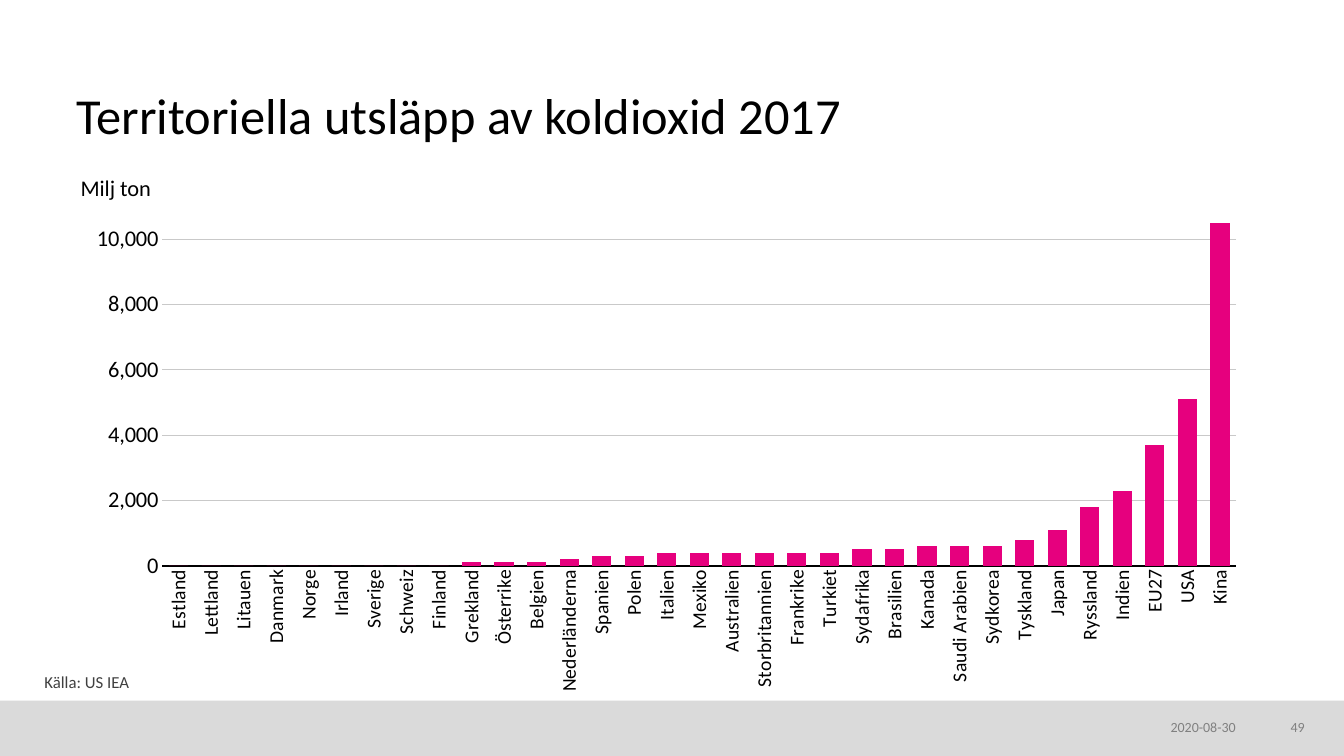
from lxml.etree import SubElement
from pptx import Presentation
from pptx.chart.data import CategoryChartData
from pptx.dml.color import RGBColor
from pptx.enum.chart import XL_CHART_TYPE, XL_TICK_MARK
from pptx.enum.shapes import MSO_SHAPE
from pptx.enum.text import MSO_ANCHOR, MSO_AUTO_SIZE, PP_ALIGN
from pptx.oxml import parse_xml
from pptx.oxml.ns import nsdecls, qn
from pptx.util import Inches, Pt

# Content
TITLE = "Territoriella utsläpp av koldioxid 2017"
UNIT = "Milj ton"
SOURCE = "Källa: US IEA"
DATE, PAGE = "2020-08-30", "49"
EMISSIONS = {
    "Estland": 0, "Lettland": 0, "Litauen": 0, "Danmark": 0, "Norge": 0,
    "Irland": 0, "Sverige": 0, "Schweiz": 0, "Finland": 0, "Grekland": 100,
    "Österrike": 100, "Belgien": 100, "Nederländerna": 200, "Spanien": 300,
    "Polen": 300, "Italien": 400, "Mexiko": 400, "Australien": 400,
    "Storbritannien": 400, "Frankrike": 400, "Turkiet": 400, "Sydafrika": 500,
    "Brasilien": 500, "Kanada": 600, "Saudi Arabien": 600, "Sydkorea": 600,
    "Tyskland": 800, "Japan": 1100, "Ryssland": 1800, "Indien": 2300,
    "EU27": 3700, "USA": 5100, "Kina": 10500,
}
PLOT = {"x": 0.115, "y": 0.062, "w": 0.881, "h": 0.598}

FONT = "Calibri"
BLACK = RGBColor(0x00, 0x00, 0x00)
DARK = RGBColor(0x40, 0x40, 0x40)
GREY = RGBColor(0x80, 0x80, 0x80)
BAND = RGBColor(0xDA, 0xDA, 0xDA)
GRID = RGBColor(0xC9, 0xC9, 0xC9)
PINK = RGBColor(0xE6, 0x00, 0x7E)


def style(font, size, color):
    font.name, font.size = FONT, Pt(size)
    font.color.rgb = color


def write(box, place, text, size, color, anchor=MSO_ANCHOR.TOP, inset=0,
          align=PP_ALIGN.LEFT, spacing=1.0, wrap=True):
    box.left, box.top, box.width, box.height = map(Inches, place)
    frame = box.text_frame
    frame.auto_size = MSO_AUTO_SIZE.NONE
    frame.word_wrap, frame.vertical_anchor = wrap, anchor
    frame.margin_left = frame.margin_right = Inches(inset)
    frame.margin_top = frame.margin_bottom = Inches(inset / 2)
    paragraph = frame.paragraphs[0]
    paragraph.alignment, paragraph.line_spacing = align, spacing
    paragraph.space_before = Pt(0)
    run = paragraph.add_run()
    run.text = text
    style(run.font, size, color)
    return paragraph


def label(place, text, size, color, **layout):
    return write(slide.shapes.add_textbox(0, 0, 0, 0), place, text, size, color, **layout)


prs = Presentation()
prs.slide_width, prs.slide_height = Inches(13.33), Inches(7.5)
slide = prs.slides.add_slide(prs.slide_layouts[1])

# Footer band
band = slide.shapes.add_shape(MSO_SHAPE.RECTANGLE, 0, Inches(6.95), prs.slide_width, Inches(0.55))
band.shadow.inherit = False
band.fill.solid()
band.fill.fore_color.rgb = BAND
band.line.fill.background()

# Title, source and small labels
write(slide.shapes.title, (0.76, 0.37, 11.87, 1.07), TITLE, 36, BLACK,
      anchor=MSO_ANCHOR.BOTTOM, spacing=0.85)
source = write(slide.placeholders[1], (0.44, 6.66, 4.86, 0.23), SOURCE, 12, DARK,
               anchor=MSO_ANCHOR.MIDDLE, spacing=0.9)
source_props = source._p.get_or_add_pPr()
source_props.set("marL", "0")
source_props.set("indent", "0")
SubElement(source_props, qn("a:buNone"))
label((11.61, 7.13, 0.85, 0.2), DATE, 10, GREY)
label((12.55, 7.13, 0.39, 0.2), PAGE, 10, GREY, align=PP_ALIGN.RIGHT)
label((0.7, 1.68, 0.91, 0.37), UNIT, 16, BLACK, inset=0.1, wrap=False)

# Emissions chart
data = CategoryChartData()
data.categories = list(EMISSIONS)
data.add_series("Series 1", list(EMISSIONS.values()))
chart = slide.shapes.add_chart(
    XL_CHART_TYPE.COLUMN_STACKED, Inches(0.22), Inches(1.68), Inches(12.09), Inches(5.96), data).chart
chart.has_legend = chart.has_title = False
style(chart.font, 10, BLACK)
columns = chart.plots[0]
columns.gap_width, columns.overlap = 70, 100
columns.vary_by_categories = False
emissions = columns.series[0]
emissions.format.fill.solid()
emissions.format.fill.fore_color.rgb = PINK

# Country axis with upright names
countries = chart.category_axis
countries.major_tick_mark = countries.minor_tick_mark = XL_TICK_MARK.NONE
countries.format.line.color.rgb = BLACK
countries.format.line.width = Pt(1.5)
style(countries.tick_labels.font, 14, BLACK)
names_body = countries._element.find(qn("c:txPr")).find(qn("a:bodyPr"))
names_body.set("rot", "-5400000")
names_body.set("vert", "horz")

# Value axis
tonnes = chart.value_axis
tonnes.minimum_scale, tonnes.maximum_scale, tonnes.major_unit = 0, 11000, 2000
tonnes.major_tick_mark = tonnes.minor_tick_mark = XL_TICK_MARK.NONE
tonnes.format.line.fill.background()
tonnes.major_gridlines.format.line.color.rgb = GRID
tonnes.major_gridlines.format.line.width = Pt(0.75)
tonnes.tick_labels.number_format = "#,##0"
tonnes.tick_labels.number_format_is_linked = False
style(tonnes.tick_labels.font, 16, BLACK)

# Fixed place of the plot inside the chart
plot_area = chart._chartSpace.chart.plotArea
for automatic in plot_area.findall(qn("c:layout")):
    plot_area.remove(automatic)
sizes = "".join(f'<c:{side} val="{share}"/>' for side, share in PLOT.items())
plot_area.insert(0, parse_xml(
    f'<c:layout {nsdecls("c")}><c:manualLayout><c:layoutTarget val="inner"/>'
    f'<c:xMode val="edge"/><c:yMode val="edge"/>{sizes}</c:manualLayout></c:layout>'))

prs.save("out.pptx")
